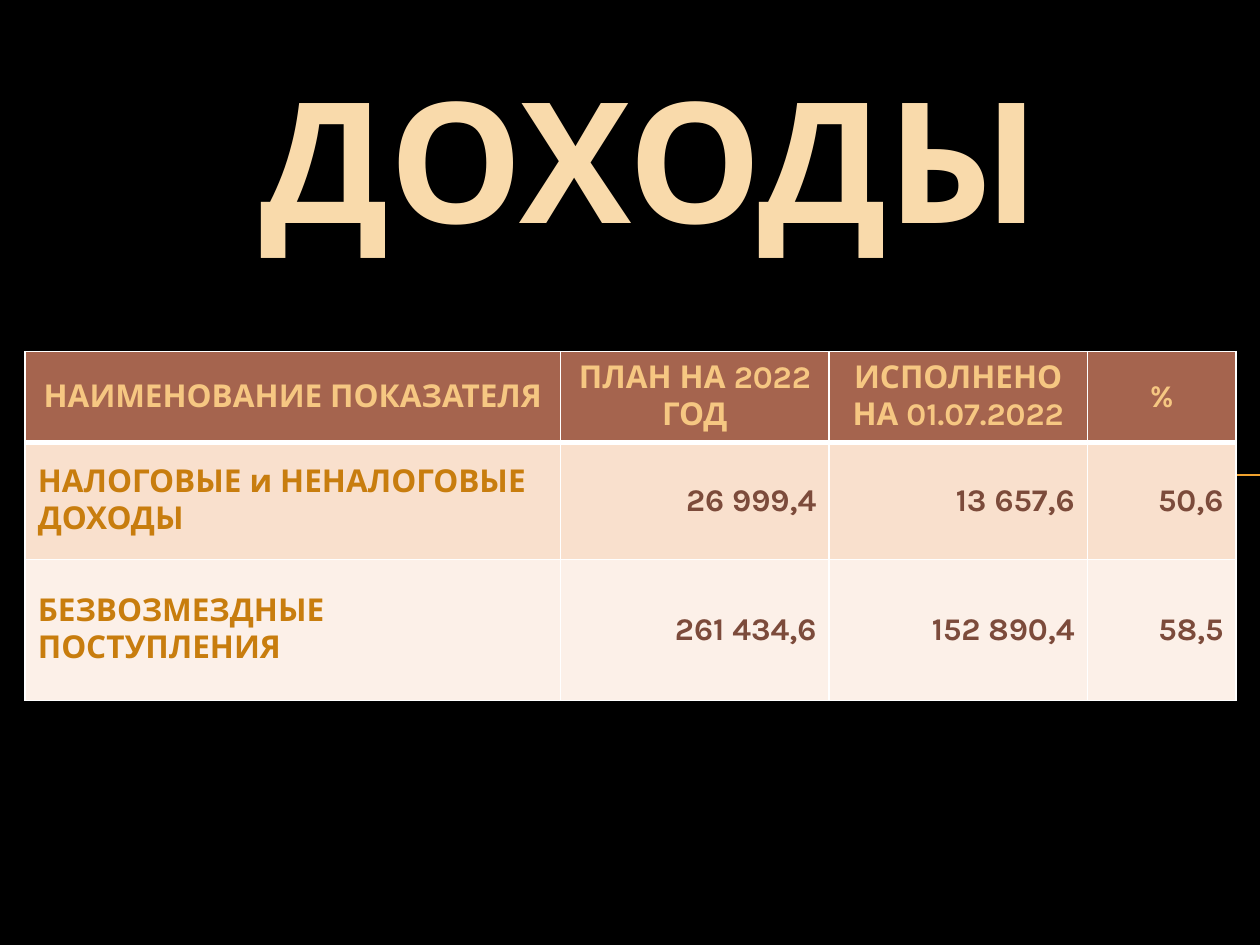
"""Build a slide with a table of budget income, planned and received."""
from lxml import etree
from pptx import Presentation
from pptx.dml.color import RGBColor
from pptx.enum.shapes import MSO_CONNECTOR
from pptx.enum.text import MSO_ANCHOR, MSO_AUTO_SIZE, PP_ALIGN
from pptx.oxml import parse_xml
from pptx.oxml.ns import qn
from pptx.util import Inches, Pt

CENTER, LEFT, RIGHT = PP_ALIGN.CENTER, PP_ALIGN.LEFT, PP_ALIGN.RIGHT
MIDDLE, TOP = MSO_ANCHOR.MIDDLE, MSO_ANCHOR.TOP
STRAIGHT = MSO_CONNECTOR.STRAIGHT
NO_AUTOFIT = MSO_AUTO_SIZE.NONE
NAMESPACE = "http://schemas.openxmlformats.org/drawingml/2006/main"


def add_text(paragraph, text, size, color, alignment):
    paragraph.alignment = alignment
    run = paragraph.add_run()
    run.text = text
    run.font.name = "Karla"
    run.font.size = Pt(size)
    run.font.bold = True
    run.font.color.rgb = RGBColor.from_string(color)
    return run


def line_xml(tag, color, width):
    return parse_xml(
        f'<a:{tag} xmlns:a="{NAMESPACE}" w="{Pt(width)}"><a:solidFill>'
        f'<a:srgbClr val="{color}"/></a:solidFill></a:{tag}>'
    )


presentation = Presentation()
presentation.slide_width = Inches(10)
presentation.slide_height = Inches(7.5)
slide = presentation.slides.add_slide(presentation.slide_layouts[5])
slide.background.fill.solid()
slide.background.fill.fore_color.rgb = RGBColor.from_string("000000")

title = slide.shapes.title
title.left, title.top = Inches(0.91), Inches(0.44)
title.width, title.height = Inches(8.5), Inches(1.49)
title_frame = title.text_frame
title_frame.auto_size = NO_AUTOFIT
title_frame.vertical_anchor = TOP
title_frame.margin_top = 0
title_run = add_text(title_frame.paragraphs[0], "ДОХОДЫ", 96, "F9DAAB", CENTER)
title_run.font._element.insert(0, line_xml("ln", "C87D0E", 0.15))

rule = slide.shapes.add_connector(
    STRAIGHT, Inches(0.56), Inches(3.77), Inches(10), Inches(3.77)
)
rule.line.color.rgb = RGBColor.from_string("F0A22E")
rule.line.width = Pt(0.75)
etree.SubElement(rule._element.spPr, qn("a:effectLst"))

rows = [
    ["НАИМЕНОВАНИЕ ПОКАЗАТЕЛЯ", "ПЛАН НА 2022 ГОД", "ИСПОЛНЕНО НА 01.07.2022", "%"],
    ["НАЛОГОВЫЕ и НЕНАЛОГОВЫЕ ДОХОДЫ", "26 999,4", "13 657,6", "50,6"],
    ["БЕЗВОЗМЕЗДНЫЕ ПОСТУПЛЕНИЯ", "261 434,6", "152 890,4", "58,5"],
]
row_fills = ["A5644E", "F9E0CD", "FCF0E8"]
column_widths = [4.25, 2.13, 2.05, 1.18]
row_heights = [0.72, 0.93, 1.12]

table = slide.shapes.add_table(
    len(rows), len(column_widths),
    Inches(0.2), Inches(2.79), Inches(9.61), Inches(2.77),
).table
for column, width in zip(table.columns, column_widths):
    column.width = Inches(width)
for row, height in zip(table.rows, row_heights):
    row.height = Inches(height)

for row_index, texts in enumerate(rows):
    for column_index, text in enumerate(texts):
        cell = table.cell(row_index, column_index)
        cell.vertical_anchor = MIDDLE
        cell.fill.solid()
        cell.fill.fore_color.rgb = RGBColor.from_string(row_fills[row_index])
        if row_index == 0:
            color, alignment = "F6C782", CENTER
        elif column_index == 0:
            color, alignment = "C87D0E", LEFT
        else:
            color, alignment = "7C4B3B", RIGHT
        add_text(cell.text_frame.paragraphs[0], text, 18, color, alignment)
        top_width = 3 if row_index == 1 else 1
        bottom_width = 3 if row_index == 0 else 1
        borders = [("lnL", 1), ("lnR", 1), ("lnT", top_width), ("lnB", bottom_width)]
        properties = cell._tc.get_or_add_tcPr()
        for position, (tag, width) in enumerate(borders):
            properties.insert(position, line_xml(tag, "FFFFFF", width))

presentation.save("out.pptx")
